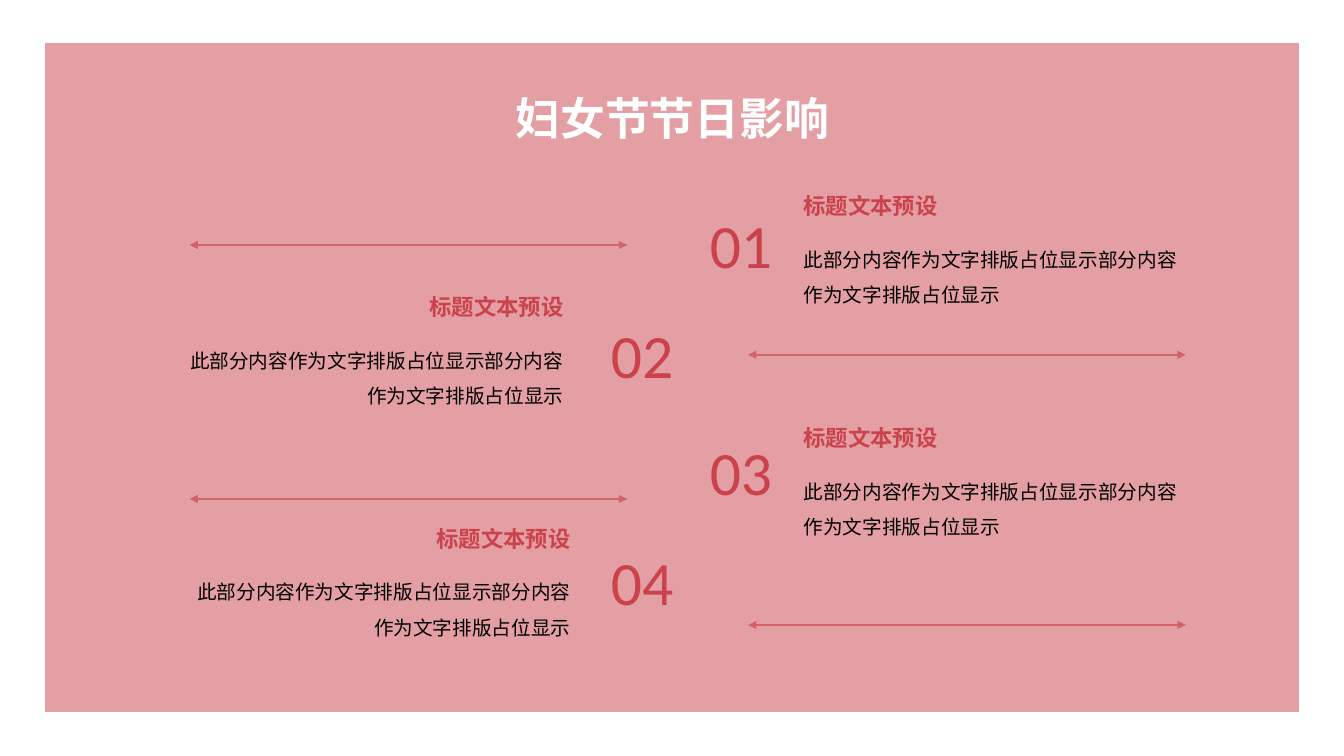
from lxml import etree
from pptx import Presentation
from pptx.dml.color import RGBColor
from pptx.enum.shapes import MSO_CONNECTOR, MSO_SHAPE
from pptx.enum.text import MSO_ANCHOR, MSO_AUTO_SIZE, PP_ALIGN
from pptx.oxml.ns import qn
from pptx.util import Pt

LEFT, CENTER, RIGHT = PP_ALIGN.LEFT, PP_ALIGN.CENTER, PP_ALIGN.RIGHT
TOP, MIDDLE = MSO_ANCHOR.TOP, MSO_ANCHOR.MIDDLE
NO_AUTOFIT = MSO_AUTO_SIZE.NONE
RECTANGLE, STRAIGHT = MSO_SHAPE.RECTANGLE, MSO_CONNECTOR.STRAIGHT

PX = 9144  # 100 px to the inch
THEME = {
    "panel": RGBColor.from_string("E49FA4"),
    "arrow": RGBColor.from_string("D3636B"),
    "latin": "Calibri",
    "cjk": "Noto Sans CJK SC",
    "title": {"size": Pt(32), "bold": True, "color": "FFFFFF"},
    "heading": {"size": Pt(16), "bold": True, "color": "CA424C"},
    "body": {"size": Pt(14), "bold": False, "color": "000000"},
    "number": {"size": Pt(44), "bold": False, "color": "CA424C"},
}
HEADING = "标题文本预设"
BODY = "此部分内容作为文字排版占位显示部分内容作为文字排版占位显示"


def write(box, words, style, align, anchor=TOP, spacing=None):
    frame = box.text_frame
    frame_format = {"word_wrap": True, "auto_size": NO_AUTOFIT, "vertical_anchor": anchor,
                    "margin_left": 0, "margin_top": 0, "margin_right": 0, "margin_bottom": 0}
    for name, value in frame_format.items():
        setattr(frame, name, value)
    paragraph = frame.paragraphs[0]
    paragraph.alignment = align
    paragraph.line_spacing = spacing
    run = paragraph.add_run()
    run.text = words
    run.font.name = THEME["latin"]
    run.font.size = THEME[style]["size"]
    run.font.bold = THEME[style]["bold"]
    run.font.color.rgb = RGBColor.from_string(THEME[style]["color"])
    east_asian = etree.SubElement(run.font._element, qn("a:ea"))
    east_asian.set("typeface", THEME["cjk"])


def place(left, top, width, height):
    return [length * PX for length in (left, top, width, height)]


deck = Presentation()
deck.slide_width, deck.slide_height = 1333 * PX, 750 * PX
slide = deck.slides.add_slide(deck.slide_layouts[5])
shapes = slide.shapes

# Title
title = shapes.title
title.left, title.top, title.width, title.height = place(460, 85, 414, 64)
write(title, "妇女节节日影响", "title", CENTER, MIDDLE)

# Pink panel, behind the title
panel = shapes.add_shape(RECTANGLE, *place(45, 43, 1243, 663))
panel.shadow.inherit = False
panel.fill.solid()
panel.fill.fore_color.rgb = THEME["panel"]
panel.line.color.rgb = THEME["panel"]
panel.line.width = Pt(1)
title._element.addprevious(panel._element)

# Double-headed arrows opposite the text blocks
for start, y in ((188, 243), (742, 352), (188, 495), (742, 620)):
    arrow = shapes.add_connector(STRAIGHT, start * PX, y * PX, (start + 434) * PX, y * PX)
    arrow.line.color.rgb = THEME["arrow"]
    arrow.line.width = Pt(1.5)
    for end in ("a:headEnd", "a:tailEnd"):
        etree.SubElement(arrow.line._get_or_add_ln(), qn(end)).set("type", "triangle")
    etree.SubElement(arrow._element.spPr, qn("a:effectLst"))

# Numbered points: text edge, heading top, number left and top, alignment
points = (
    (797, 191, 693, 205, LEFT),
    (559, 291, 595, 314, RIGHT),
    (797, 421, 693, 431, LEFT),
    (566, 521, 595, 540, RIGHT),
)
for index, (edge, top, number_left, number_top, align) in enumerate(points, 1):
    heading_left, body_left = [edge if align == LEFT else edge - width for width in (251, 372)]
    heading = shapes.add_textbox(*place(heading_left, top, 251, 34))
    write(heading, HEADING, "heading", align)
    body = shapes.add_textbox(*place(body_left, top + 43, 372, 109))
    write(body, BODY, "body", align, spacing=1.5)
    number = shapes.add_textbox(*place(number_left, number_top, 84, 90))
    write(number, f"{index:02}", "number", CENTER)

deck.save("out.pptx")
